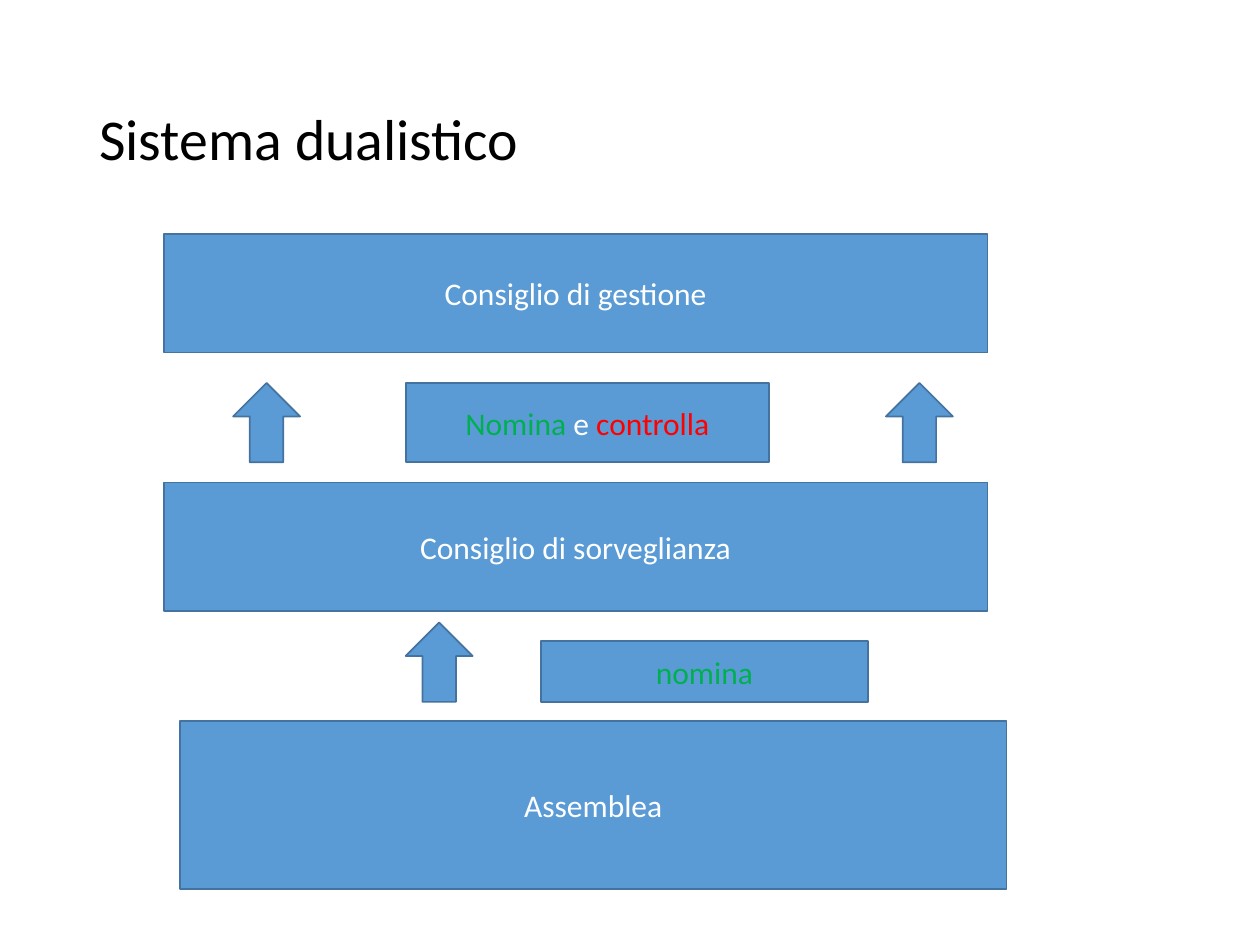
import pptx
import pptx.dml.color
import pptx.enum.shapes
import pptx.enum.text
import pptx.util

Cm = pptx.util.Cm
Pt = pptx.util.Pt
RGBColor = pptx.dml.color.RGBColor
MSO_SHAPE = pptx.enum.shapes.MSO_SHAPE

BLUE = RGBColor(0x5B, 0x9B, 0xD5)
DARK_BLUE = RGBColor(0x43, 0x73, 0x9E)
WHITE = RGBColor(0xFF, 0xFF, 0xFF)
BLACK = RGBColor(0x00, 0x00, 0x00)
GREEN = RGBColor(0x00, 0xB0, 0x50)
RED = RGBColor(0xFF, 0x00, 0x00)

presentation = pptx.Presentation()
presentation.slide_width = Cm(25.4)
presentation.slide_height = Cm(19.05)
slide = presentation.slides.add_slide(presentation.slide_layouts[6])


def add_block(kind, left, top, width, height):
    shape = slide.shapes.add_shape(kind, Cm(left), Cm(top), Cm(width), Cm(height))
    shape.shadow.inherit = False
    shape.fill.solid()
    shape.fill.fore_color.rgb = BLUE
    shape.line.color.rgb = DARK_BLUE
    shape.line.width = Pt(1)
    return shape


# Title
title = slide.shapes.add_textbox(Cm(1.75), Cm(1.02), Cm(21.9), Cm(3.68))
title.text_frame.word_wrap = True
title.text_frame.vertical_anchor = pptx.enum.text.MSO_ANCHOR.MIDDLE
paragraph = title.text_frame.paragraphs[0]
paragraph.text = "Sistema dualistico"
paragraph.line_spacing = 0.9
paragraph.font.name = "Calibri"
paragraph.font.size = Pt(33)
paragraph.font.color.rgb = BLACK

# Company bodies and the powers between them
boxes = [
    (3.3, 4.72, 16.61, 2.39, [("Consiglio di gestione", WHITE)]),
    (8.18, 7.72, 7.32, 1.6, [("Nomina", GREEN), (" e ", WHITE), ("controlla", RED)]),
    (3.3, 9.73, 16.61, 2.59, [("Consiglio di sorveglianza", WHITE)]),
    (10.9, 12.93, 6.6, 1.22, [("nomina", GREEN)]),
    (3.63, 14.53, 16.66, 3.4, [("Assemblea", WHITE)]),
]
for left, top, width, height, runs in boxes:
    box = add_block(MSO_SHAPE.RECTANGLE, left, top, width, height)
    box.text_frame.word_wrap = True
    box.text_frame.vertical_anchor = pptx.enum.text.MSO_ANCHOR.MIDDLE
    paragraph = box.text_frame.paragraphs[0]
    paragraph.alignment = pptx.enum.text.PP_ALIGN.CENTER
    paragraph.font.name = "Calibri"
    paragraph.font.size = Pt(18)
    for text, color in runs:
        run = paragraph.add_run()
        run.text = text
        run.font.color.rgb = color

# Upward arrows from each body to the one it appoints
for left, top in [(4.7, 7.72), (17.86, 7.72), (8.18, 12.55)]:
    add_block(MSO_SHAPE.UP_ARROW, left, top, 1.35, 1.6)

presentation.save("out.pptx")
